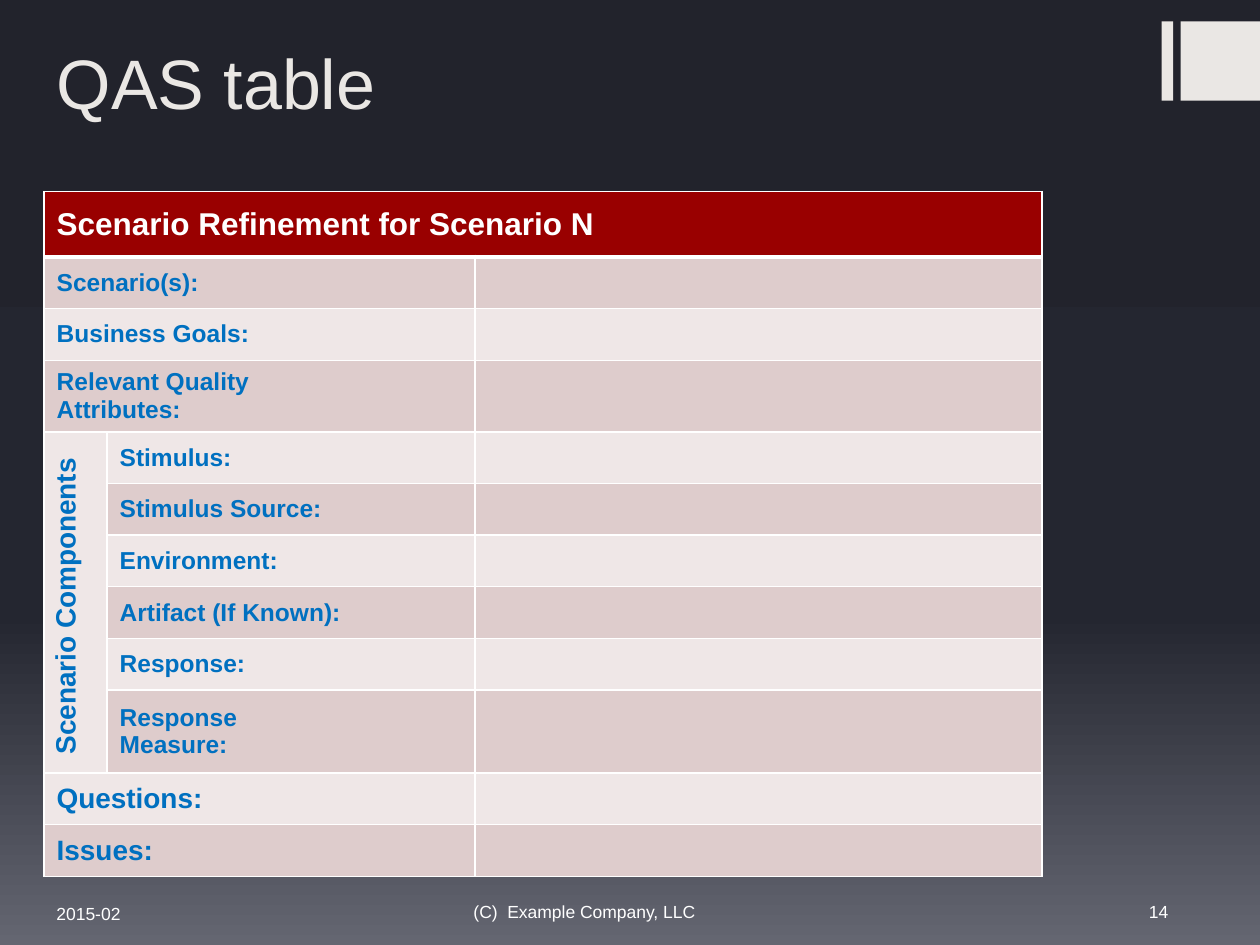
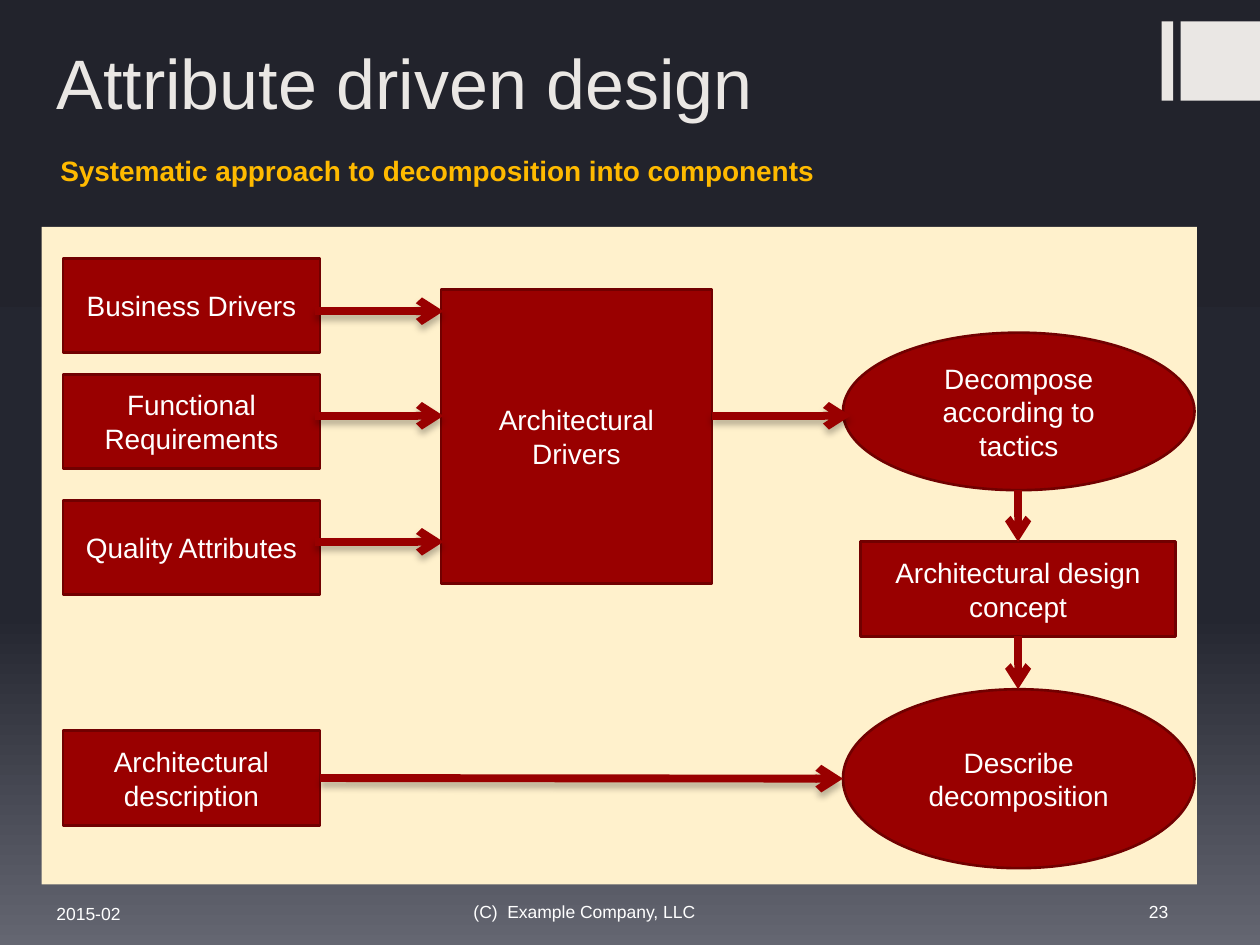
from lxml.etree import SubElement
from pptx import Presentation
from pptx.dml.color import RGBColor
from pptx.enum.shapes import MSO_CONNECTOR, MSO_SHAPE as SHAPE
from pptx.enum.text import MSO_ANCHOR as ANCHOR, MSO_AUTO_SIZE, PP_ALIGN as ALIGN
from pptx.oxml.ns import qn
from pptx.util import Inches, Pt

# Shared look
COLORS = {
    "pale": "EAE7E4", "white": "FFFFFF", "red": "990000", "dark_red": "710000",
    "blue": "0070C0", "gold": "FFBA00", "cream": "FFF1CC",
    "band_dark": "DECCCC", "band_light": "EFE7E7", "shadow": "000000",
}
BACKGROUND_STOPS = [(0, "22232C"), (65, "242630"), (100, "646671")]
FONT = "Arial"
CORNER_BARS = [(9.22, 0.17, 0.09, 0.63), (9.37, 0.17, 0.63, 0.63)]
TITLE_BOX = (0.35, 0.16, 8.65, 0.87)
DATE = ("2015-02", (0.35, 7.05, 1.3, 0.33))
COPYRIGHT = ("(C)  Example Company, LLC", (3.66, 7.04, 2.46, 0.33))
NUMBER_BOX = (8.34, 7.04, 1.03, 0.33)

# Scenario table: label, first column, size, row height
TABLE_BOX = (0.35, 1.52, 7.92, 5.41)
COLUMN_WIDTHS = [0.5, 2.92, 4.5]
TABLE_HEADING = "Scenario Refinement for Scenario N"
SIDE_LABEL = "Scenario Components "
HEADING_HEIGHT = 0.52
SCENARIO_ROWS = [
    ("Scenario(s):", 0, 14, 0.41),
    ("Business Goals:", 0, 14, 0.41),
    ("Relevant Quality\nAttributes:", 0, 14, 0.54),
    ("Stimulus:", 1, 14, 0.41),
    ("Stimulus Source:", 1, 14, 0.41),
    ("Environment:", 1, 14, 0.41),
    ("Artifact (If Known):", 1, 14, 0.41),
    ("Response:", 1, 14, 0.41),
    ("Response\nMeasure:", 1, 14, 0.66),
    ("Questions:", 0, 16, 0.41),
    ("Issues:", 0, 16, 0.41),
]

# Design flow
SUBTITLE = ("Systematic approach to decomposition into components",
            (0.38, 1.17, 9.45, 0.37))
PANEL = (0.33, 1.8, 9.17, 5.22)
INPUT_LEFT, INPUT_WIDTH, INPUT_HEIGHT = 0.5, 2.04, 0.75
INPUT_TOPS = {
    "Business Drivers": 2.05,
    "Functional Requirements": 2.97,
    "Quality Attributes": 3.97,
    "Architectural description": 5.8,
}
STAGES = [
    ("Architectural Drivers", SHAPE.RECTANGLE, (3.5, 2.3, 2.15, 2.33)),
    ("Decompose according to tactics", SHAPE.OVAL, (6.69, 2.64, 2.79, 1.25)),
    ("Describe decomposition", SHAPE.OVAL, (6.69, 5.47, 2.79, 1.42)),
    ("Architectural design concept", SHAPE.RECTANGLE, (6.83, 4.3, 2.5, 0.75)),
]
# Start, end, joined start (box, side), joined end (box, side)
SIDEWAYS_ARROWS = [((2.5, y), (3.52, y), None, None) for y in (2.47, 3.3, 4.3)] + [
    ((5.65, 3.3), (6.75, 3.3), None, None),
    ((2.54, 6.18), (6.69, 6.18), ("Architectural description", 3), None),
]
DOWN_ARROWS = [
    ((8.08, 3.89), (8.08, 4.3), None, ("Architectural design concept", 0)),
    ((8.08, 5.05), (8.08, 5.47), ("Architectural design concept", 2), None),
]


def rgb(color):
    return RGBColor.from_string(COLORS[color])


def inches(values):
    return [Inches(value) for value in values]


def write(frame, text, size, color, align=ALIGN.LEFT, anchor=ANCHOR.MIDDLE, bold=False):
    frame.text = text
    frame.word_wrap = True
    frame.vertical_anchor = anchor
    for paragraph in frame.paragraphs:
        paragraph.alignment = align
        for name, value in {"name": FONT, "size": Pt(size), "bold": bold}.items():
            setattr(paragraph.font, name, value)
        paragraph.font.color.rgb = rgb(color)


def add_text(slide, text, box, size, color, **layout):
    frame = slide.shapes.add_textbox(*inches(box)).text_frame
    write(frame, text, size, color, **layout)


def add_block(slide, kind, box, fill, outline=None):
    block = slide.shapes.add_shape(kind, *inches(box))
    block.shadow.inherit = False
    block.fill.solid()
    block.fill.fore_color.rgb = rgb(fill)
    if outline:
        block.line.color.rgb = rgb(outline)
        block.line.width = Pt(1.5)
    else:
        block.line.fill.background()
    return block


def add_color(parent, color):
    return SubElement(parent, qn("a:srgbClr"), val=color)


def start_slide(deck, title, number):
    slide = deck.slides.add_slide(deck.slide_layouts[5])

    # Background gradient, top to bottom
    fill = slide.background.fill
    fill.gradient()
    fill.gradient_angle = 270
    stops = slide.element.find(".//" + qn("a:gsLst"))
    for stop in list(stops):
        stops.remove(stop)
    for percent, color in BACKGROUND_STOPS:
        add_color(SubElement(stops, qn("a:gs"), pos=str(percent * 1000)), color)

    # Corner bars and title
    for bar in CORNER_BARS:
        add_block(slide, SHAPE.RECTANGLE, bar, "pale")
    heading = slide.shapes.title
    heading.left, heading.top, heading.width, heading.height = inches(TITLE_BOX)
    write(heading.text_frame, title, 40, "pale", anchor=ANCHOR.BOTTOM)
    heading.text_frame.auto_size = MSO_AUTO_SIZE.NONE

    # Footer
    for text, box, align in [(*DATE, ALIGN.LEFT), (*COPYRIGHT, ALIGN.LEFT),
                             (str(number), NUMBER_BOX, ALIGN.RIGHT)]:
        add_text(slide, text, box, 10, "white", align=align, anchor=ANCHOR.BOTTOM)
    return slide


def format_cell(cell, fill, bottom=1):
    properties = cell._tc.get_or_add_tcPr()
    for side, width in {"lnL": 1, "lnR": 1, "lnT": 1, "lnB": bottom}.items():
        border = SubElement(properties, qn("a:" + side), w=str(Pt(width)))
        add_color(SubElement(border, qn("a:solidFill")), COLORS["white"])
    cell.fill.solid()
    cell.fill.fore_color.rgb = rgb(fill)


def write_cell(cell, text, size, color="blue", **layout):
    write(cell.text_frame, text, size, color, bold=True, **layout)
    cell.vertical_anchor = layout.get("anchor", ANCHOR.MIDDLE)


def build_scenario_table(deck):
    slide = start_slide(deck, "QAS table", 14)
    table = slide.shapes.add_table(
        len(SCENARIO_ROWS) + 1, len(COLUMN_WIDTHS), *inches(TABLE_BOX)).table
    table.horz_banding = False
    for column, width in zip(table.columns, COLUMN_WIDTHS):
        column.width = Inches(width)
    heights = [HEADING_HEIGHT] + [row[-1] for row in SCENARIO_ROWS]
    for index, (row, height) in enumerate(zip(table.rows, heights)):
        row.height = Inches(height)
        fill = "band_dark" if index % 2 else "band_light"
        for cell in row.cells:
            format_cell(cell, fill if index else "red", 1 if index else 3)

    # Heading and row labels
    table.cell(0, 0).merge(table.cell(0, 2))
    write_cell(table.cell(0, 0), TABLE_HEADING, 18, "white")
    for index, (label, column, size, _) in enumerate(SCENARIO_ROWS, 1):
        if column == 0:
            table.cell(index, 0).merge(table.cell(index, 1))
        write_cell(table.cell(index, column), label, size)

    # Upright label beside the components
    components = [i for i, row in enumerate(SCENARIO_ROWS, 1) if row[1] == 1]
    side = table.cell(components[0], 0)
    side.merge(table.cell(components[-1], 0))
    write_cell(side, SIDE_LABEL, 16, align=ALIGN.CENTER, anchor=ANCHOR.TOP)
    side._tc.get_or_add_tcPr().set("vert", "vert270")


def add_arrow(slide, blocks, arrow, width, shadow):
    start, end, joined_start, joined_end = arrow
    line = slide.shapes.add_connector(MSO_CONNECTOR.STRAIGHT, *inches(start + end))
    if joined_start:
        line.begin_connect(blocks[joined_start[0]], joined_start[1])
    if joined_end:
        line.end_connect(blocks[joined_end[0]], joined_end[1])
    line.line.color.rgb = rgb("red")
    line.line.width = Pt(width)
    SubElement(line.line._get_or_add_ln(), qn("a:tailEnd"), type="arrow")
    effects = SubElement(line._element.spPr, qn("a:effectLst"))
    if shadow:
        drop = SubElement(effects, qn("a:outerShdw"), blurRad=str(Pt(4)),
                          dist=str(Pt(3)), dir="5400000", rotWithShape="0")
        SubElement(add_color(drop, COLORS["shadow"]), qn("a:alpha"), val="28000")


def build_design_flow(deck):
    slide = start_slide(deck, "Attribute driven design", 23)
    add_text(slide, *SUBTITLE, 16, "gold", anchor=ANCHOR.TOP, bold=True)
    add_block(slide, SHAPE.RECTANGLE, PANEL, "cream")

    # Inputs and stages
    inputs = [(text, SHAPE.RECTANGLE, (INPUT_LEFT, top, INPUT_WIDTH, INPUT_HEIGHT))
              for text, top in INPUT_TOPS.items()]
    blocks = {}
    for text, kind, box in inputs + STAGES:
        blocks[text] = add_block(slide, kind, box, "red", "dark_red")
        write(blocks[text].text_frame, text, 16, "white", align=ALIGN.CENTER)

    # Arrows
    for arrow in SIDEWAYS_ARROWS:
        add_arrow(slide, blocks, arrow, 4.5, shadow=True)
    for arrow in DOWN_ARROWS:
        add_arrow(slide, blocks, arrow, 4.25, shadow=False)


def main():
    deck = Presentation()
    deck.slide_width, deck.slide_height = inches((10, 7.5))
    build_scenario_table(deck)
    build_design_flow(deck)
    deck.save("out.pptx")


if __name__ == "__main__":
    main()
